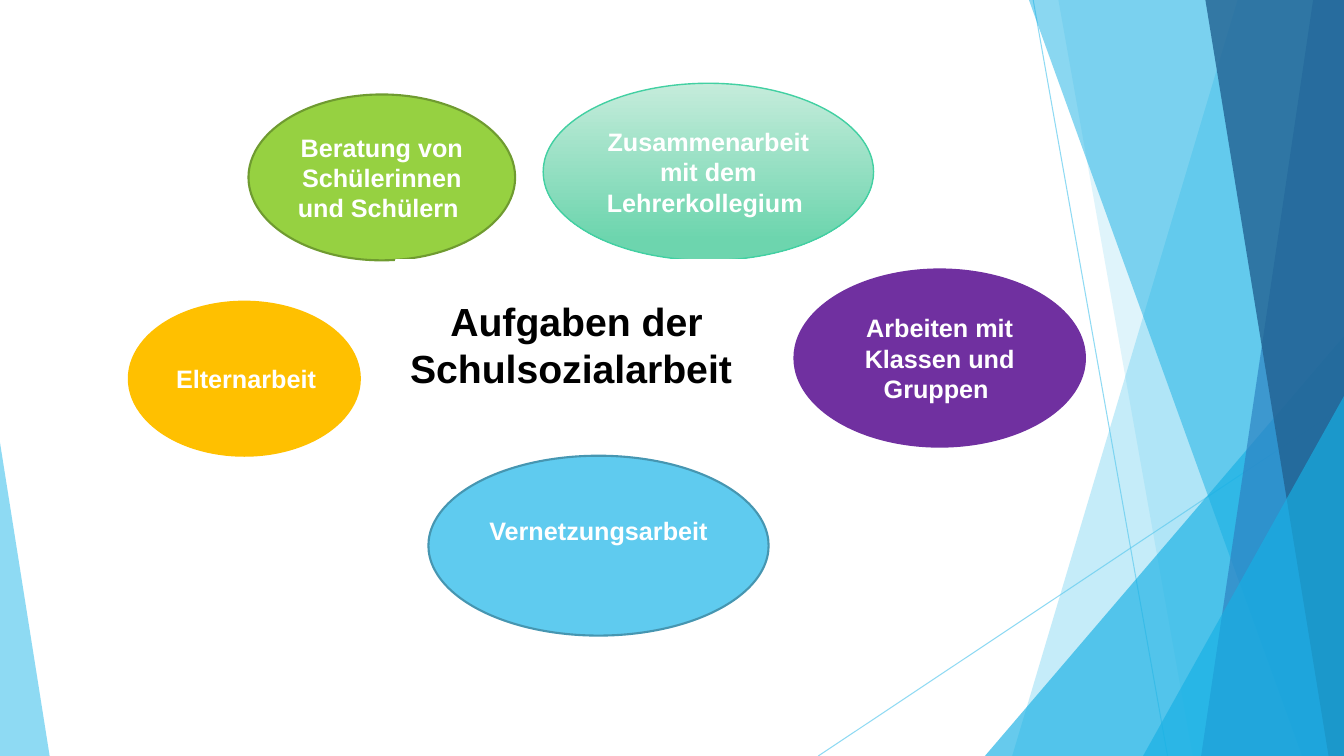
"""Build a slide on the tasks of school social work."""
import pptx
import pptx.util
import pptx.dml.color
import pptx.enum.shapes
import pptx.enum.text
import pptx.oxml
import pptx.oxml.ns

Pt = pptx.util.Pt
Kind = pptx.enum.shapes.MSO_SHAPE
Align = pptx.enum.text.PP_ALIGN
Anchor = pptx.enum.text.MSO_ANCHOR
HUES = {
    "sky": "5FCBEF", "cyan": "17B0E4", "blue": "2E83C3", "navy": "226292",
    "green": "96D141", "moss": "6F9B30", "gold": "FFC000", "plum": "7030A0",
    "mint": "C5ECDB", "jade": "6DD5AE", "teal": "42D0A2", "steel": "4696B1",
    "white": "FFFFFF", "black": "000000",
}
WIDE, HIGH = 960, 540


def tint(fill, hue, alpha=100):
    """Set a solid colour with an opacity in percent."""
    fill.solid()
    fill.fore_color.rgb = pptx.dml.color.RGBColor.from_string(HUES[hue])
    if alpha < 100:
        clr = fill._xPr.find(".//" + pptx.oxml.ns.qn("a:srgbClr"))
        node = pptx.oxml.parse_xml(
            f'<a:alpha {pptx.oxml.ns.nsdecls("a")} val="{alpha * 1000}"/>')
        clr.append(node)


def write(shape, text, size, hue, align=Align.CENTER):
    """Put bold text in the middle of a shape."""
    frame = shape.text_frame
    frame.word_wrap = True
    frame.auto_size = pptx.enum.text.MSO_AUTO_SIZE.NONE
    frame.vertical_anchor = Anchor.MIDDLE
    frame.text = text
    para = frame.paragraphs[0]
    para.alignment = align
    para.font.name = "Arial"
    para.font.size = Pt(size)
    para.font.bold = True
    tint(para.font.fill, hue)


deck = pptx.Presentation()
deck.slide_width, deck.slide_height = Pt(WIDE), Pt(HIGH)
slide = deck.slides.add_slide(deck.slide_layouts[5])
shapes = slide.shapes

for ends in [(738, 0, 834, HIGH), (WIDE, 290, 584.5, HIGH)]:
    line = shapes.add_connector(
        pptx.enum.shapes.MSO_CONNECTOR.STRAIGHT, *map(Pt, ends))
    line.line.width = Pt(0.75)
    tint(line.line.fill, "sky", 70)
    line._element.spPr.append(pptx.oxml.parse_xml(
        f'<a:effectLst {pptx.oxml.ns.nsdecls("a")}/>'))

bands = [
    ("band", 884, 723, "sky", 36),
    ("band", 756, 852, "sky", 20),
    ("wedge", (703.5, 240, 256.5, 300), 1, "cyan", 66),
    ("band", 735, 929.5, "cyan", 50),
    ("band", 938, 858.5, "blue", 70),
    ("band", 861, 949, "navy", 80),
    ("wedge", (816.5, 283, 143.5, 257), 1, "cyan", 66),
    ("wedge", (0, 316, 35.5, 224), 0, "sky", 70),
]
for form, first, second, hue, alpha in bands:
    if form == "band":
        path = shapes.build_freeform(first, 0, scale=Pt(1))
        path.add_line_segments([(WIDE, 0), (WIDE, HIGH), (second, HIGH)])
        shape = path.convert_to_shape()
    else:
        shape = shapes.add_shape(Kind.ISOSCELES_TRIANGLE, *map(Pt, first))
        shape.adjustments[0] = second
    shape.shadow.inherit = False
    tint(shape.fill, hue, alpha)
    shape.line.fill.background()

tasks = [
    ("Beratung von Schülerinnen und Schülern ",
     (177.5, 67.5, 190.5, 118.5), "green", "moss", 1.5),
    ("Elternarbeit", (92, 215.5, 165, 110), "gold", "gold", 1.5),
    ("Zusammenarbeit mit dem Lehrerkollegium ",
     (388, 59.5, 236, 126.5), "mint", "teal", 1),
    ("Arbeiten mit Klassen und Gruppen ",
     (567.5, 192.5, 207.5, 126.5), "plum", "plum", 1.5),
    ("Vernetzungsarbeit", (306, 325.5, 243, 128.5), "sky", "steel", 1.5),
]
ovals = {}
for text, box, hue, edge, width in tasks:
    oval = shapes.add_shape(Kind.OVAL, *map(Pt, box))
    oval.shadow.inherit = False
    tint(oval.fill, hue)
    tint(oval.line.fill, edge)
    oval.line.width = Pt(width)
    write(oval, text, 18, "white")
    ovals[hue] = oval

ovals["gold"].text_frame.paragraphs[0].alignment = Align.RIGHT
ovals["sky"].text_frame.margin_bottom = Pt(25)
fade = ovals["mint"].fill
fade.gradient()
fade.gradient_angle = 270
for stop, hue, place in zip(fade.gradient_stops, ("mint", "jade"), (0, 0.88)):
    stop.color.rgb = pptx.dml.color.RGBColor.from_string(HUES[hue])
    stop.position = place

title = shapes.title
title.left, title.top, title.width, title.height = map(
    Pt, (283, 185.5, 257.5, 121))
tint(title.fill, "white")
tint(title.line.fill, "white")
title.line.width = Pt(1.5)
write(title, "Aufgaben der Schulsozialarbeit ", 28, "black")
shapes._spTree.append(title._element)

deck.save("out.pptx")
